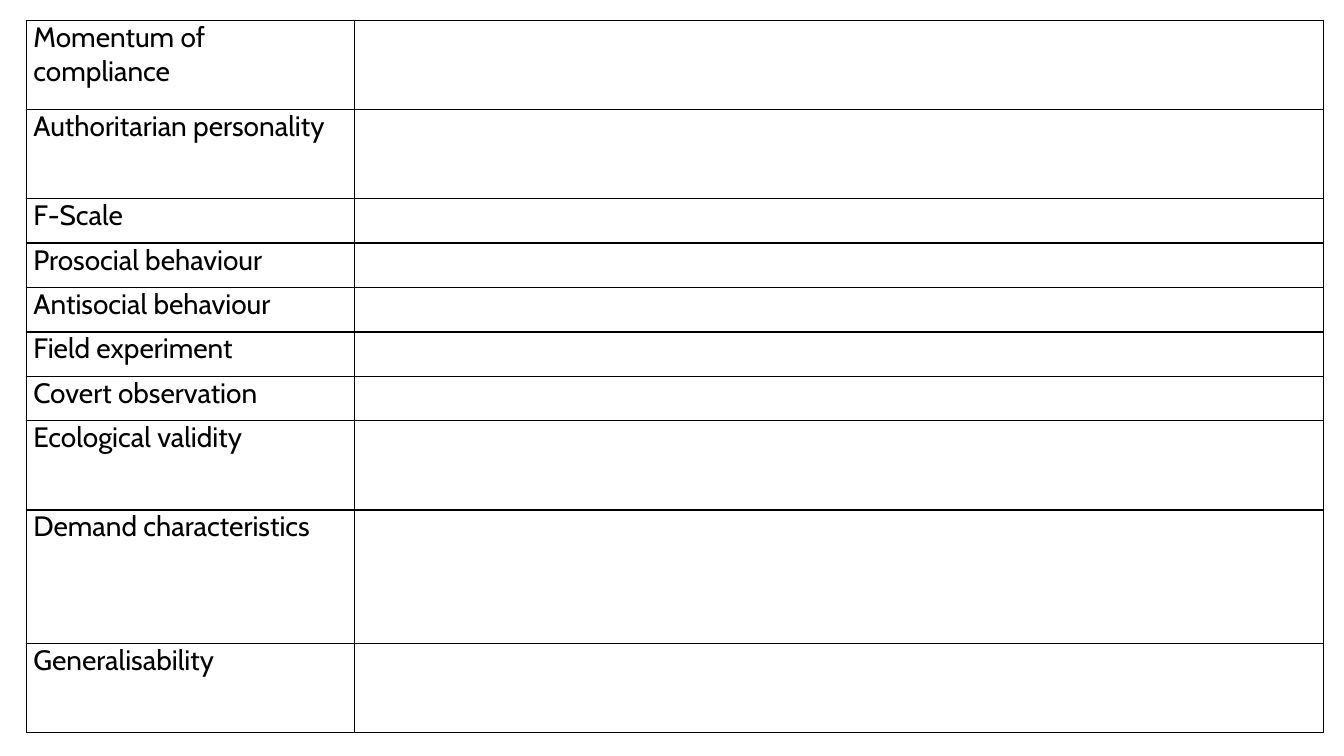
from dataclasses import dataclass

from lxml.etree import SubElement
from pptx import Presentation
from pptx.dml.color import RGBColor
from pptx.oxml.ns import qn
from pptx.table import Table, _Cell as Cell
from pptx.util import Pt

COLOURS = {"ink": "000000"}
ROW_UNIT = 31.8
TERM_WIDTH, DEFINITION_WIDTH = 234.7, 691.9


@dataclass(frozen=True)
class Term:
    """A key term and the height of its row in units."""

    name: str
    units: int = 1


TERMS = [
    Term("Momentum of compliance", 2),
    Term("Authoritarian personality", 2),
    Term("F-Scale"),
    Term("Prosocial behaviour"),
    Term("Antisocial behaviour"),
    Term("Field experiment"),
    Term("Covert observation"),
    Term("Ecological validity", 2),
    Term("Demand characteristics", 3),
    Term("Generalisability", 2),
]


def format_cell(cell: Cell, width: float = 1) -> None:
    """Give a cell narrow margins, a border on each side and no fill."""
    cell.margin_left = cell.margin_right = Pt(5.04)
    cell.margin_top = cell.margin_bottom = Pt(0)
    properties = cell._tc.get_or_add_tcPr()
    for side in ("lnL", "lnR", "lnT", "lnB"):
        border = SubElement(properties, qn(f"a:{side}"), w=str(Pt(width)))
        paint = SubElement(border, qn("a:solidFill"))
        SubElement(paint, qn("a:srgbClr"), val=COLOURS["ink"])
    cell.fill.background()


def write(cell: Cell, text: str, *, size: float = 20, font: str = "Cabin",
          colour: str = "ink") -> None:
    """Write formatted text in a cell."""
    run = cell.text_frame.paragraphs[0].add_run()
    run.text = text
    run.font.size = Pt(size)
    run.font.name = font
    run.font.color.rgb = RGBColor.from_string(COLOURS[colour])


def fill_glossary(glossary: Table, terms: list[Term]) -> None:
    """Size the glossary and enter its terms."""
    glossary.first_row = glossary.horz_banding = False
    for column, width in zip(glossary.columns, (TERM_WIDTH, DEFINITION_WIDTH)):
        column.width = Pt(width)
    for row, term in zip(glossary.rows, terms):
        row.height = Pt(term.units * ROW_UNIT)
        for cell in row.cells:
            format_cell(cell)
        write(row.cells[0], term.name)


def main() -> None:
    """Build and save the glossary slide."""
    deck = Presentation()
    deck.slide_width, deck.slide_height = Pt(960), Pt(540)
    slide = deck.slides.add_slide(deck.slide_layouts[6])
    height = ROW_UNIT * sum(term.units for term in TERMS)
    frame = slide.shapes.add_table(
        len(TERMS), 2, Pt(18.8), Pt(14.6),
        Pt(TERM_WIDTH + DEFINITION_WIDTH), Pt(height))
    fill_glossary(frame.table, TERMS)
    deck.save("out.pptx")


if __name__ == "__main__":
    main()
